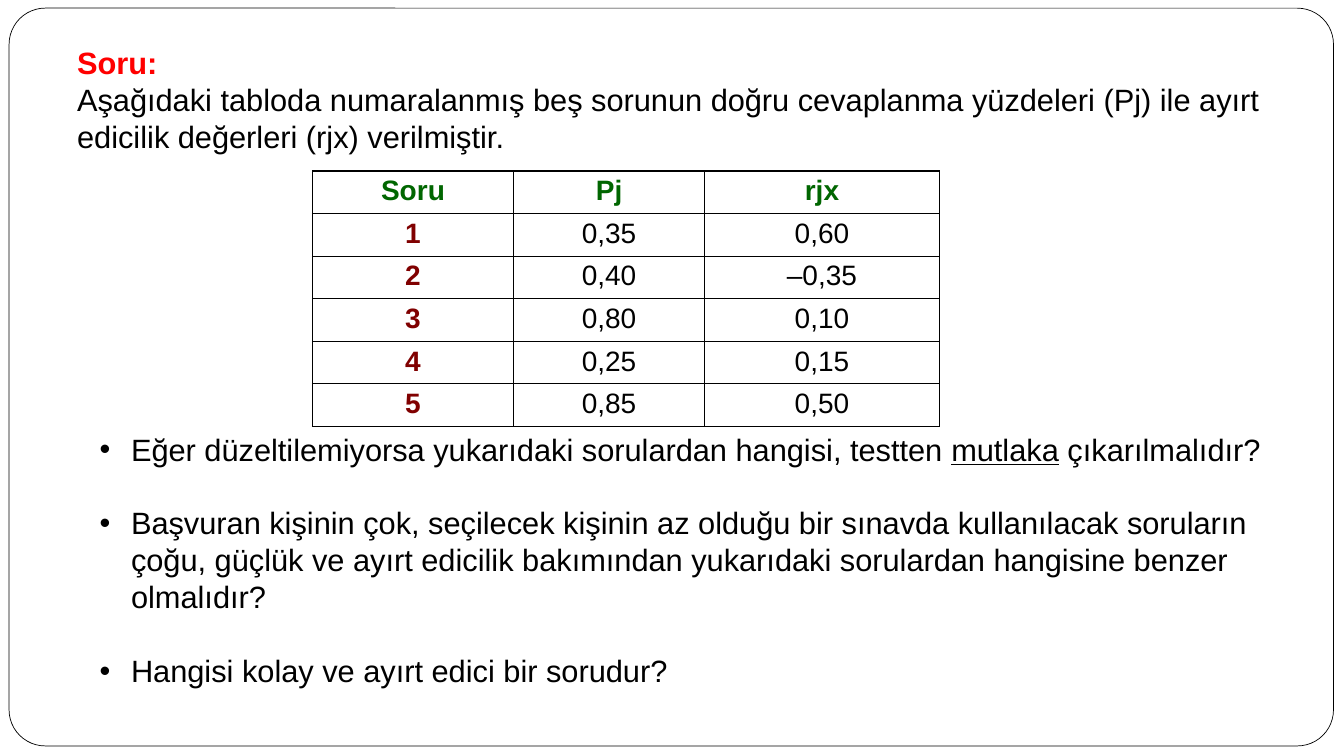
from lxml.etree import SubElement
from pptx import Presentation
from pptx.dml.color import RGBColor
from pptx.enum.shapes import MSO_SHAPE
from pptx.enum.text import MSO_ANCHOR, MSO_AUTO_SIZE, PP_ALIGN
from pptx.oxml.ns import qn
from pptx.util import Pt

BLACK, WHITE, RED, GREEN, MAROON = "000000", "FFFFFF", "FF0000", "006600", "800000"

HEADINGS = ["Soru", "Pj", "rjx"]
ITEMS = [
    ["1", "0,35", "0,60"],
    ["2", "0,40", "–0,35"],
    ["3", "0,80", "0,10"],
    ["4", "0,25", "0,15"],
    ["5", "0,85", "0,50"],
]
# Each question is a list of (text, underlined) runs
QUESTIONS = [
    [("Eğer düzeltilemiyorsa yukarıdaki sorulardan hangisi, testten ", False),
     ("mutlaka", True),
     (" çıkarılmalıdır?", False)],
    [("Başvuran kişinin çok, seçilecek kişinin az olduğu bir sınavda kullanılacak "
      "soruların çoğu, güçlük ve ayırt edicilik bakımından yukarıdaki sorulardan "
      "hangisine benzer olmalıdır?", False)],
    [("Hangisi kolay ve ayırt edici bir sorudur?", False)],
]


def color(hex_string):
    return RGBColor.from_string(hex_string)


def add_run(paragraph, text, size=22, ink=BLACK, bold=False, underline=False):
    run = paragraph.add_run()
    run.text = text
    run.font.name = "Arial"
    run.font.size = Pt(size)
    run.font.bold = bold
    run.font.underline = underline
    run.font.color.rgb = color(ink)


def add_text_frame(slide, left, top, width, height, anchor=MSO_ANCHOR.TOP):
    frame = slide.shapes.add_textbox(Pt(left), Pt(top), Pt(width), Pt(height)).text_frame
    frame.word_wrap = True
    frame.auto_size = MSO_AUTO_SIZE.SHAPE_TO_FIT_TEXT
    frame.vertical_anchor = anchor
    return frame


def add_border(slide):
    border = slide.shapes.add_shape(
        MSO_SHAPE.ROUNDED_RECTANGLE, Pt(6.5), Pt(5.8), Pt(946), Pt(527))
    border.adjustments[0] = 0.049
    border.shadow.inherit = False
    border.fill.solid()
    border.fill.fore_color.rgb = color(WHITE)
    border.line.color.rgb = color(BLACK)
    border.line.width = Pt(0.5)


def add_intro(slide):
    frame = add_text_frame(slide, 48, 27.4, 912, 87, MSO_ANCHOR.MIDDLE)
    add_run(frame.paragraphs[0], "Soru:", ink=RED, bold=True)
    add_run(frame.add_paragraph(),
            "Aşağıdaki tabloda numaralanmış beş sorunun doğru cevaplanma yüzdeleri (Pj) "
            "ile ayırt edicilik değerleri (rjx) verilmiştir.")


def outline_cell(cell):
    properties = cell._tc.get_or_add_tcPr()
    for position, side in enumerate(("a:lnL", "a:lnR", "a:lnT", "a:lnB")):
        edge = SubElement(properties, qn(side), w=str(Pt(1)))
        fill = SubElement(edge, qn("a:solidFill"))
        SubElement(fill, qn("a:srgbClr"), val=BLACK)
        properties.insert(position, edge)


def fill_cell(cell, text, ink, bold):
    cell.margin_left = cell.margin_right = Pt(9.2)
    cell.margin_top = cell.margin_bottom = Pt(3.2)
    cell.fill.solid()
    cell.fill.fore_color.rgb = color(WHITE)
    outline_cell(cell)
    paragraph = cell.text_frame.paragraphs[0]
    paragraph.alignment = PP_ALIGN.CENTER
    add_run(paragraph, text, 20, ink, bold)


def add_item_table(slide):
    rows = [HEADINGS] + ITEMS
    widths = [143.6, 136.6, 167.6]
    row_height = 29.4
    table = slide.shapes.add_table(
        len(rows), len(widths), Pt(223.2), Pt(122.2),
        Pt(sum(widths)), Pt(row_height * len(rows))).table
    for column, width in zip(table.columns, widths):
        column.width = Pt(width)
    for r, values in enumerate(rows):
        table.rows[r].height = Pt(row_height)
        for c, value in enumerate(values):
            ink = GREEN if r == 0 else MAROON if c == 0 else BLACK
            fill_cell(table.cell(r, c), value, ink, bold=ink != BLACK)


def add_bullet(paragraph, indent):
    properties = paragraph._p.get_or_add_pPr()
    properties.set("marL", str(Pt(indent)))
    properties.set("indent", str(Pt(-indent)))
    SubElement(properties, qn("a:buFont"), typeface="Arial")
    SubElement(properties, qn("a:buChar"), char="•")


def add_questions(slide):
    frame = add_text_frame(slide, 64, 303.8, 862, 220)
    for number, runs in enumerate(QUESTIONS):
        paragraph = frame.add_paragraph() if number else frame.paragraphs[0]
        paragraph.space_before = Pt(26.4 if number else 0)
        add_bullet(paragraph, 22.5)
        for text, underlined in runs:
            add_run(paragraph, text, underline=underlined)


def main():
    deck = Presentation()
    deck.slide_width, deck.slide_height = Pt(960), Pt(540)
    slide = deck.slides.add_slide(deck.slide_layouts[6])
    # Frame around the slide
    add_border(slide)
    # Question, its data and the sub-questions
    add_intro(slide)
    add_item_table(slide)
    add_questions(slide)
    deck.save("out.pptx")


if __name__ == "__main__":
    main()
